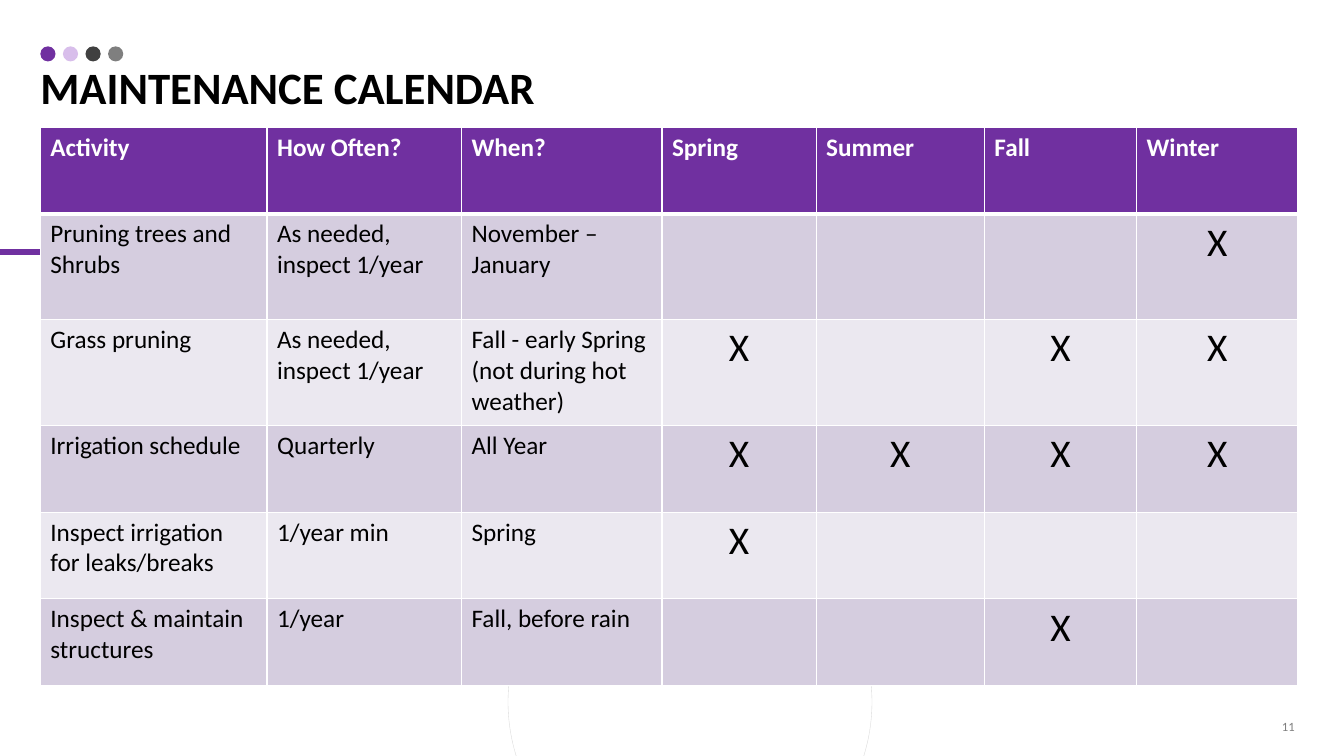
"""Build the maintenance calendar slide with its seasonal activity table."""
from dataclasses import dataclass

from lxml import etree
from pptx import Presentation
from pptx.dml.color import RGBColor
from pptx.enum.shapes import MSO_CONNECTOR, MSO_SHAPE
from pptx.enum.text import MSO_ANCHOR, PP_ALIGN
from pptx.oxml.ns import qn
from pptx.util import Inches, Pt

STRAIGHT, OVAL = MSO_CONNECTOR.STRAIGHT, MSO_SHAPE.OVAL
BOTTOM, MIDDLE = MSO_ANCHOR.BOTTOM, MSO_ANCHOR.MIDDLE
LEFT, CENTER, RIGHT = PP_ALIGN.LEFT, PP_ALIGN.CENTER, PP_ALIGN.RIGHT

WIDTH, HEIGHT = Inches(13.333), Inches(7.5)
FONT = "Calibri"
PURPLE, WHITE, BLACK, GRAY = "7030A0", "FFFFFF", "000000", "7F7F7F"
BANDS = ("D5CDDF", "EBE8F0")
DOT_COLORS = (PURPLE, "D8BEEB", "404040", GRAY)
MARGIN, DOT_STEP = 3, 1.68
SEASONS = ("Spring", "Summer", "Fall", "Winter")
HEADINGS = ("Activity", "How Often?", "When?") + SEASONS
COLUMN_SHARES = (16.87, 14.47, 14.92, 11.47, 12.52, 11.32, 12)


@dataclass(frozen=True)
class Area:
    """Position and size in percent of the slide."""
    left: float
    top: float
    width: float
    height: float

    def lengths(self) -> tuple[int, int, int, int]:
        return across(self.left), down(self.top), across(self.width), down(self.height)


@dataclass(frozen=True)
class TextStyle:
    size: float
    color: str = BLACK
    bold: bool = False
    align: PP_ALIGN = LEFT


@dataclass(frozen=True)
class Activity:
    name: str
    frequency: str
    period: str
    seasons: tuple[str, ...]
    height: float = 11.47

    def texts(self) -> tuple[str, ...]:
        marks = tuple("X" if season in self.seasons else "" for season in SEASONS)
        return (self.name, self.frequency, self.period) + marks


HEADING_STYLE = TextStyle(18, WHITE, True)
BODY_STYLE = TextStyle(18)
MARK_STYLE = TextStyle(28, align=CENTER)
HEADING_HEIGHT = 11.47

ACTIVITIES = (
    Activity("Pruning trees and Shrubs", "As needed, inspect 1/year",
             "November – January", ("Winter",), 14),
    Activity("Grass pruning", "As needed, inspect 1/year",
             "Fall - early Spring (not during hot weather)",
             ("Spring", "Fall", "Winter"), 14),
    Activity("Irrigation schedule", "Quarterly", "All Year", SEASONS),
    Activity("Inspect irrigation for leaks/breaks", "1/year min", "Spring", ("Spring",)),
    Activity("Inspect & maintain structures", "1/year", "Fall, before rain", ("Fall",)),
)


def across(share: float) -> int:
    return round(WIDTH * share / 100)


def down(share: float) -> int:
    return round(HEIGHT * share / 100)


def paint(color_format, color: str) -> None:
    color_format.rgb = RGBColor.from_string(color)


def fill_solid(fill, color: str) -> None:
    fill.solid()
    paint(fill.fore_color, color)


def write(para, text: str, style: TextStyle) -> None:
    para.alignment = style.align
    span = para.add_run()
    span.text = text
    span.font.name = FONT
    span.font.size = Pt(style.size)
    span.font.bold = style.bold
    paint(span.font.color, style.color)


def add_circle(page, area: Area, fill: str = "", outline: str = "") -> None:
    circle = page.shapes.add_shape(OVAL, *area.lengths())
    circle.shadow.inherit = False
    if fill:
        fill_solid(circle.fill, fill)
    else:
        circle.fill.background()
    if outline:
        paint(circle.line.color, outline)
        circle.line.width = Pt(0.25)
    else:
        circle.line.fill.background()


def add_accent_line(page, end: float, level: float) -> None:
    line = page.shapes.add_connector(STRAIGHT, 0, down(level), across(end), down(level))
    paint(line.line.color, PURPLE)
    line.line.width = Pt(4.5)
    etree.SubElement(line._element.spPr, qn("a:effectLst"))


def add_text(page, area: Area, text: str, style: TextStyle, anchor: MSO_ANCHOR,
             inset: float, spacing: float = 1) -> None:
    frame = page.shapes.add_textbox(*area.lengths()).text_frame
    frame.word_wrap = True
    frame.vertical_anchor = anchor
    frame.margin_left = frame.margin_right = Inches(inset)
    frame.margin_top = frame.margin_bottom = Inches(inset / 2)
    para = frame.paragraphs[0]
    para.line_spacing = spacing
    write(para, text, style)


def set_borders(cell, top: float, bottom: float) -> None:
    properties = cell._tc.get_or_add_tcPr()
    widths = {"a:lnL": 1, "a:lnR": 1, "a:lnT": top, "a:lnB": bottom}
    for index, (side, width) in enumerate(widths.items()):
        border = etree.Element(qn(side), w=str(Pt(width)))
        solid = etree.SubElement(border, qn("a:solidFill"))
        etree.SubElement(solid, qn("a:srgbClr"), val=WHITE)
        properties.insert(index, border)


def add_calendar(page) -> None:
    heights = [HEADING_HEIGHT] + [activity.height for activity in ACTIVITIES]
    area = Area(MARGIN, 16.8, sum(COLUMN_SHARES), sum(heights))
    rows = [HEADINGS] + [activity.texts() for activity in ACTIVITIES]
    table = page.shapes.add_table(len(rows), len(HEADINGS), *area.lengths()).table
    for column, share in zip(table.columns, COLUMN_SHARES):
        column.width = across(share)
    for row, (texts, height) in enumerate(zip(rows, heights)):
        table.rows[row].height = down(height)
        for column, text in enumerate(texts):
            cell = table.cell(row, column)
            fill_solid(cell.fill, BANDS[(row - 1) % 2] if row else PURPLE)
            set_borders(cell, 3 if row == 1 else 1, 1 if row else 3)
            if text:
                body = MARK_STYLE if text == "X" else BODY_STYLE
                write(cell.text_frame.paragraphs[0], text, body if row else HEADING_STYLE)


def main() -> None:
    deck = Presentation()
    deck.slide_width, deck.slide_height = WIDTH, HEIGHT
    page = deck.slides.add_slide(deck.slide_layouts[6])
    fill_solid(page.background.fill, WHITE)
    add_accent_line(page, 13.88, 33.33)
    for index, color in enumerate(DOT_COLORS):
        add_circle(page, Area(MARGIN + index * DOT_STEP, 6.13, 1.13, 2), fill=color)
    add_circle(page, Area(37.8, 68.8, 27.08, 48.13), outline="D9D9D9")
    add_text(page, Area(MARGIN, -1.2, 82.42, 16.27), "MAINTENANCE CALENDAR",
             TextStyle(32, bold=True), BOTTOM, 0, 0.9)
    add_text(page, Area(74.57, 94.27, 22.5, 3.6), "11",
             TextStyle(9, GRAY, align=RIGHT), MIDDLE, 0.1)
    add_calendar(page)
    deck.save("out.pptx")


if __name__ == "__main__":
    main()
